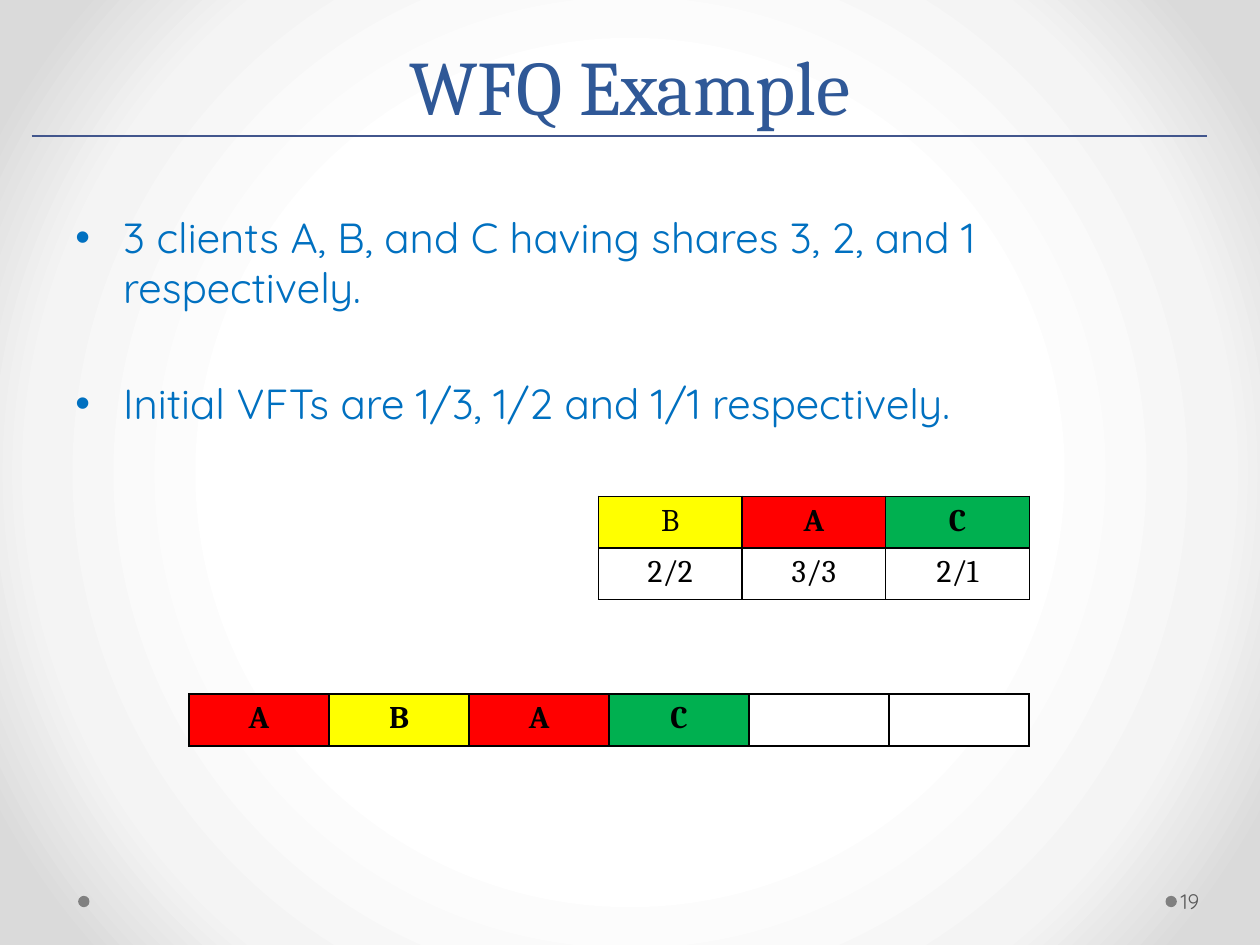
import pptx
import pptx.util
import pptx.dml.color
import pptx.enum.shapes
import pptx.enum.text
import pptx.oxml
import pptx.oxml.ns
import lxml.etree

Inches = pptx.util.Inches
Pt = pptx.util.Pt
RGBColor = pptx.dml.color.RGBColor
qn = pptx.oxml.ns.qn
ALIGN = pptx.enum.text.PP_ALIGN
ANCHOR = pptx.enum.text.MSO_ANCHOR

BLACK = RGBColor(0x00, 0x00, 0x00)
WHITE = RGBColor(0xFF, 0xFF, 0xFF)
RED = RGBColor(0xFF, 0x00, 0x00)
YELLOW = RGBColor(0xFF, 0xFF, 0x00)
GREEN = RGBColor(0x00, 0xB0, 0x50)
TITLE_BLUE = RGBColor(0x2F, 0x58, 0x97)
BODY_BLUE = RGBColor(0x00, 0x70, 0xC0)
RULE_BLUE = RGBColor(0x42, 0x56, 0x8D)
DOT_GRAY = RGBColor(0x80, 0x80, 0x80)
NUMBER_GRAY = RGBColor(0x59, 0x59, 0x59)
LIGHT_GRAY = RGBColor(0xF4, 0xF4, 0xF4)
EDGE_GRAY = RGBColor(0xDA, 0xDA, 0xDA)


def add_span(para, text, font, size, color, bold=False):
    span = para.add_run()
    span.text = text
    span.font.name = font
    span.font.size = Pt(size)
    span.font.bold = bold
    span.font.color.rgb = color


def add_grid(page, left, top, width, rows):
    columns = len(rows[0])
    frame = page.shapes.add_table(len(rows), columns, Inches(left), Inches(top),
                                  Inches(width), Inches(0.41 * len(rows)))
    table = frame.table
    for column in table.columns:
        column.width = Inches(width / columns)
    for r, row in enumerate(rows):
        for c, (text, fill, bold) in enumerate(row):
            cell = table.cell(r, c)
            props = cell._tc.get_or_add_tcPr()
            for side in ("a:lnL", "a:lnR", "a:lnT", "a:lnB"):
                border = lxml.etree.SubElement(props, qn(side), w=str(Pt(1)))
                paint = lxml.etree.SubElement(border, qn("a:solidFill"))
                lxml.etree.SubElement(paint, qn("a:srgbClr"), val=str(BLACK))
            cell.fill.solid()
            cell.fill.fore_color.rgb = fill
            if text:
                para = cell.text_frame.paragraphs[0]
                para.alignment = ALIGN.CENTER
                add_span(para, text, "Cambria", 18, BLACK, bold)


deck = pptx.Presentation()
deck.slide_width = Inches(10)
deck.slide_height = Inches(7.5)
page = deck.slides.add_slide(deck.slide_layouts[6])

page.background.fill.gradient()
gradient = page.background._cSld.find(".//" + qn("a:gradFill"))
for child in list(gradient):
    gradient.remove(child)
stops = lxml.etree.SubElement(gradient, qn("a:gsLst"))
for percent, color in ((50, WHITE), (76, LIGHT_GRAY), (92, EDGE_GRAY)):
    stop = lxml.etree.SubElement(stops, qn("a:gs"), pos=str(percent * 1000))
    lxml.etree.SubElement(stop, qn("a:srgbClr"), val=str(color))
shade = lxml.etree.SubElement(gradient, qn("a:path"), path="circle")
lxml.etree.SubElement(shade, qn("a:fillToRect"), l="50000", t="50000", r="50000", b="50000")

for left in (9.25, 0.62):
    dot = page.shapes.add_shape(pptx.enum.shapes.MSO_SHAPE.OVAL, Inches(left), Inches(7.11),
                                Inches(0.09), Inches(0.09))
    dot.shadow.inherit = False
    dot.fill.solid()
    dot.fill.fore_color.rgb = DOT_GRAY
    dot.line.fill.background()

title_box = page.shapes.add_textbox(Inches(0.5), Inches(0.17), Inches(9), Inches(0.92))
title_box.text_frame.word_wrap = True
title_box.text_frame.vertical_anchor = ANCHOR.BOTTOM
para = title_box.text_frame.paragraphs[0]
para.alignment = ALIGN.CENTER
para.line_spacing = Pt(58)
add_span(para, "WFQ Example", "Cambria", 44, TITLE_BLUE)

body_box = page.shapes.add_textbox(Inches(0.5), Inches(1.63), Inches(9), Inches(5.37))
body_box.text_frame.word_wrap = True
bullets = (
    ("3 clients A, B, and C having shares 3, 2, and 1 respectively.", 4.8),
    ("Initial VFTs are 1/3, 1/2 and 1/1 respectively.", 37.4),
)
for i, (text, gap) in enumerate(bullets):
    para = body_box.text_frame.add_paragraph() if i else body_box.text_frame.paragraphs[0]
    para.space_before = Pt(gap)
    props = para._p.get_or_add_pPr()
    props.set("marL", str(Inches(0.38)))
    props.set("indent", str(Inches(-0.38)))
    lxml.etree.SubElement(props, qn("a:buFont"), typeface="Arial")
    lxml.etree.SubElement(props, qn("a:buChar"), char="•")
    add_span(para, text, "Quicksand", 24, BODY_BLUE)

number_box = page.shapes.add_textbox(Inches(9.34), Inches(6.95), Inches(0.61), Inches(0.4))
number_frame = number_box.text_frame
number_frame.word_wrap = True
number_frame.vertical_anchor = ANCHOR.MIDDLE
number_frame.margin_left = Inches(0.03)
number_frame.margin_right = Inches(0.05)
add_span(number_frame.paragraphs[0], "19", "Quicksand", 12, NUMBER_GRAY)

rule = page.shapes.add_connector(pptx.enum.shapes.MSO_CONNECTOR.STRAIGHT, Inches(0.25),
                                 Inches(1.08), Inches(9.58), Inches(1.08))
rule.line.color.rgb = RULE_BLUE
rule.line.width = Pt(0.75)
lxml.etree.SubElement(rule._element.spPr, qn("a:effectLst"))

add_grid(page, 4.75, 3.94, 3.42, [
    [("B", YELLOW, False), ("A", RED, True), ("C", GREEN, True)],
    [("2/2", WHITE, False), ("3/3", WHITE, False), ("2/1", WHITE, False)],
])
add_grid(page, 1.5, 5.51, 6.67, [
    [("A", RED, True), ("B", YELLOW, True), ("A", RED, True), ("C", GREEN, True),
     ("", WHITE, False), ("", WHITE, False)],
])

deck.save("out.pptx")
